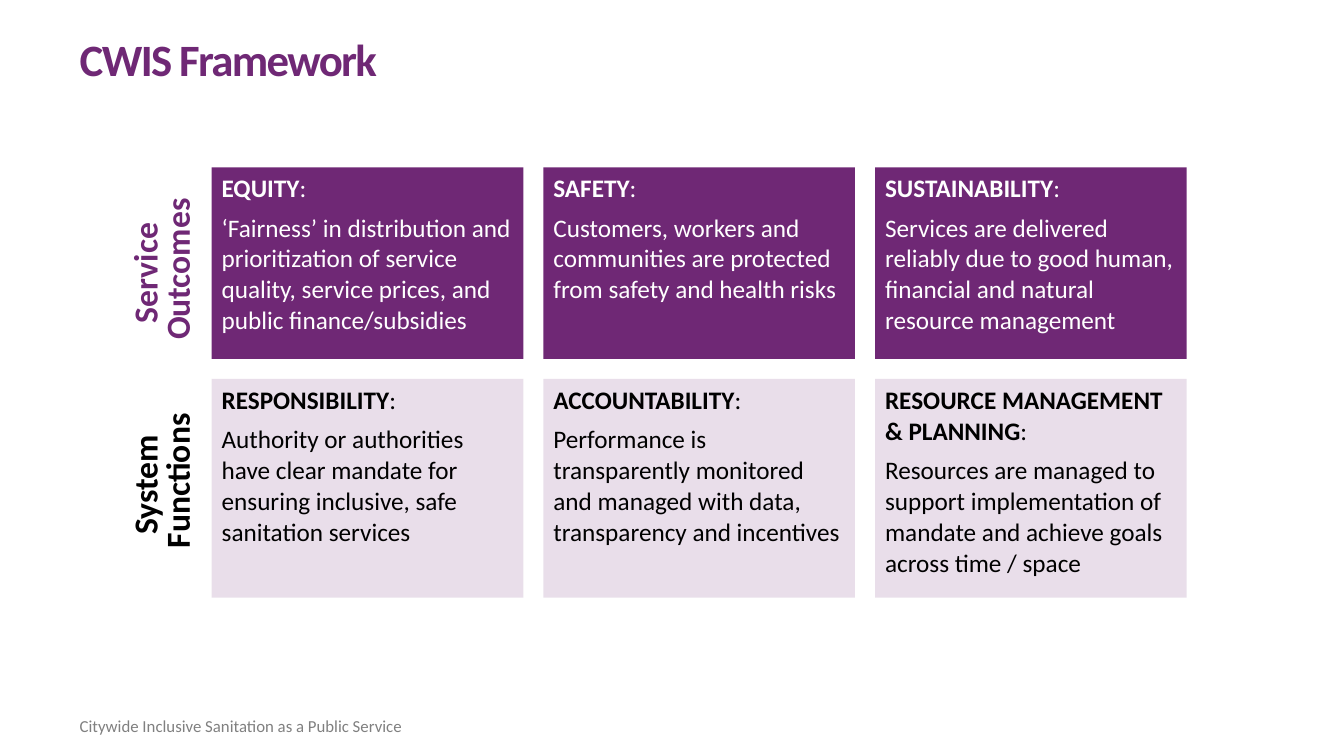
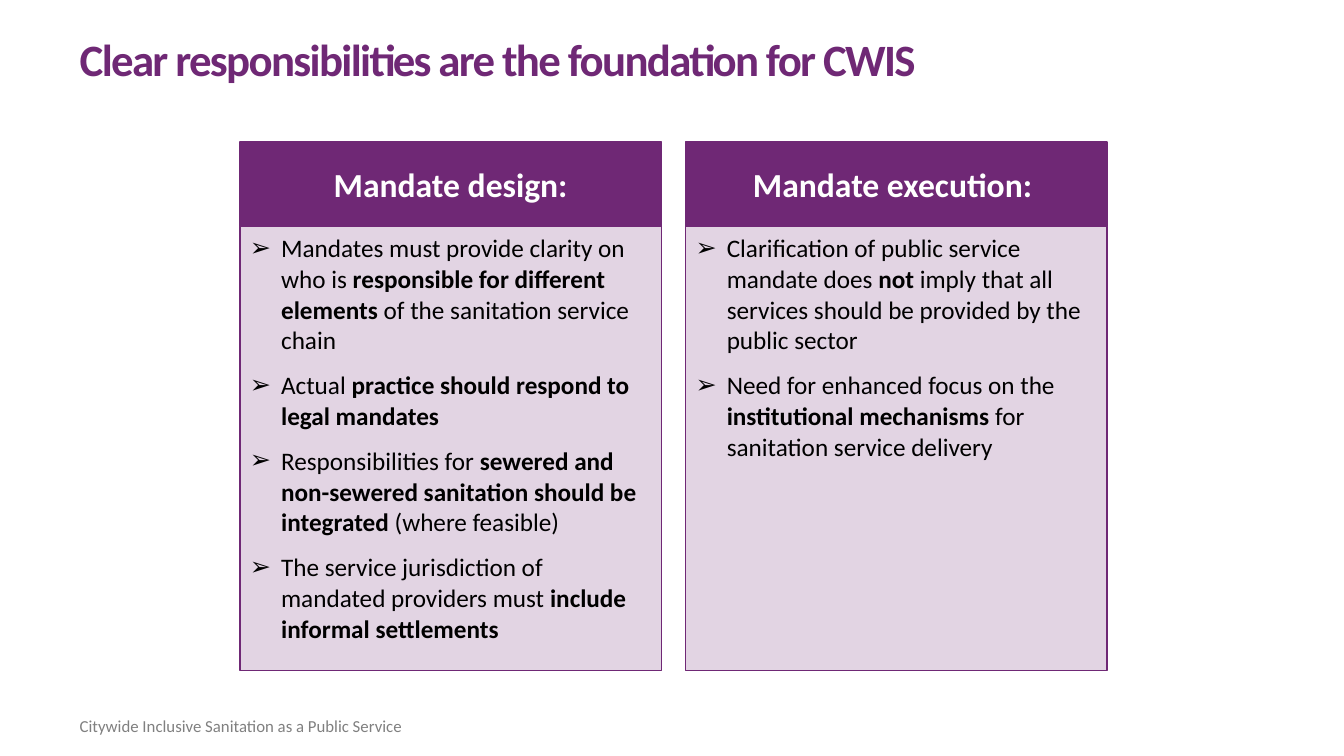
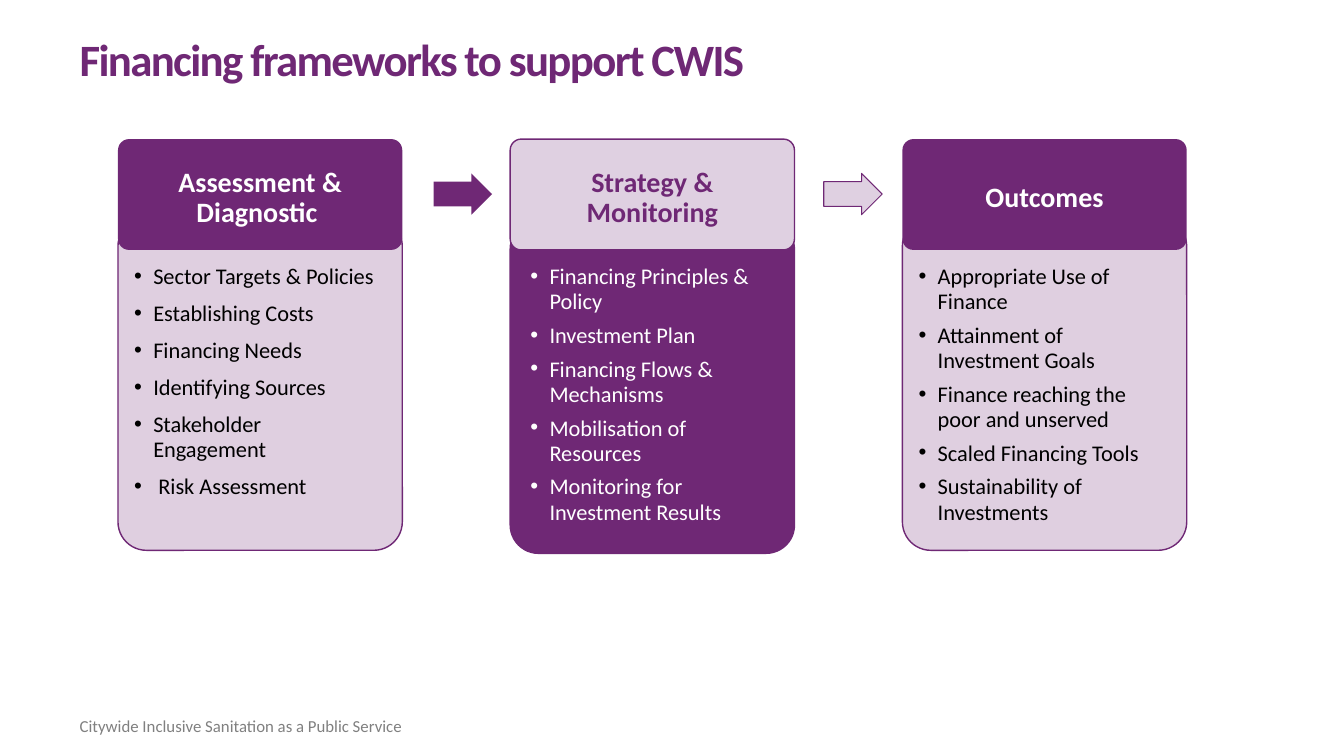
import pptx
import pptx.util
import pptx.dml.color
import pptx.enum.shapes
import pptx.enum.text
import pptx.oxml.ns
from lxml import etree

Inches, Pt = pptx.util.Inches, pptx.util.Pt
RGB = pptx.dml.color.RGBColor
SHAPE = pptx.enum.shapes.MSO_SHAPE
ALIGN = pptx.enum.text.PP_ALIGN
ANCHOR = pptx.enum.text.MSO_ANCHOR
qn = pptx.oxml.ns.qn

PURPLE = RGB(0x6F, 0x28, 0x75)
LILAC = RGB(0xDF, 0xD0, 0xE1)
WHITE = RGB(0xFF, 0xFF, 0xFF)
BLACK = RGB(0x00, 0x00, 0x00)
GREY = RGB(0x80, 0x80, 0x80)
FONT = "Calibri"
MARGIN = 0.79
INSETS = (0.1, 0.05, 0.1, 0.05)
NO_INSETS = (0, 0, 0, 0)

FOOTER = "Citywide Inclusive Sanitation as a Public Service"

FRAMEWORK = [
    dict(label=["Service ", "Outcomes"], top=1.66, height=1.9, alpha=100,
         label_color=PURPLE, color=WHITE, cells=[
             ("EQUITY", "‘Fairness’ in distribution and prioritization of service "
              "quality, service prices, and public finance/subsidies"),
             ("SAFETY", "Customers, workers and communities are protected from "
              "safety and health risks"),
             ("SUSTAINABILITY", "Services are delivered reliably due to good human, "
              "financial and natural resource management")]),
    dict(label=["System ", "Functions"], top=3.76, height=2.17, alpha=15,
         label_color=BLACK, color=BLACK, cells=[
             ("RESPONSIBILITY", "Authority or authorities have clear mandate for "
              "ensuring inclusive, safe sanitation services"),
             ("ACCOUNTABILITY", "Performance is transparently monitored and managed "
              "with data, transparency and incentives"),
             ("RESOURCE MANAGEMENT & PLANNING", "Resources are managed to support "
              "implementation of mandate and achieve goals across time / space")]),
]

MANDATES = [
    ("Mandate design:", [
        "Mandates must provide clarity on who is *responsible for different elements "
        "*of the sanitation service chain",
        "Actual *practice should respond to legal mandates",
        "Responsibilities for *sewered and non-sewered sanitation should be integrated "
        "*(where feasible)",
        "The service jurisdiction of mandated providers must "
        "*include informal settlements"]),
    ("Mandate execution: ", [
        "Clarification of public service mandate does *not* imply that all services "
        "should be provided by the public sector",
        "Need for enhanced focus on the *institutional mechanisms "
        "*for sanitation service delivery"]),
]

STAGES = [
    dict(head="Assessment & Diagnostic ", head_fill=PURPLE, head_color=WHITE,
         alpha=22, color=BLACK, top=2.16, indent=0.16, before=2.4,
         items=["Sector Targets & Policies", "Establishing Costs", "Financing Needs",
                "Identifying Sources", "Stakeholder Engagement", " Risk Assessment"]),
    dict(head="Strategy & Monitoring", head_fill=LILAC, head_color=PURPLE,
         alpha=100, color=WHITE, top=2.19, indent=0.2, before=0,
         items=["Financing Principles & Policy", "Investment Plan",
                "Financing Flows & Mechanisms", "Mobilisation of Resources",
                "Monitoring for Investment Results"]),
    dict(head="Outcomes", head_fill=PURPLE, head_color=WHITE,
         alpha=22, color=BLACK, top=2.16, indent=0.16, before=0,
         items=["Appropriate Use of Finance", "Attainment of Investment Goals",
                "Finance reaching the poor and unserved", "Scaled Financing Tools",
                "Sustainability of Investments"]),
]


def add_box(slide, kind, at, fill, alpha=100, line=None, adj=()):
    sp = slide.shapes.add_shape(kind, *map(Inches, at))
    sp.shadow.inherit = False
    sp.fill.solid()
    sp.fill.fore_color.rgb = fill
    if alpha < 100:
        color = sp.fill._xPr.find(qn("a:solidFill"))[0]
        etree.SubElement(color, qn("a:alpha"), val=str(alpha * 1000))
    if line:
        sp.line.color.rgb = PURPLE
        sp.line.width = Pt(line)
    else:
        sp.line.fill.background()
    for i, value in enumerate(adj):
        sp.adjustments[i] = value
    return sp


def set_text(sp, paragraphs, size, color, bold=False, align=ALIGN.LEFT,
             anchor=ANCHOR.TOP, insets=NO_INSETS, spacing=None, before=0, after=0,
             bullet=None, indent=0.0):
    tf = sp.text_frame
    tf.word_wrap = True
    tf.auto_size = pptx.enum.text.MSO_AUTO_SIZE.NONE
    tf.vertical_anchor = anchor
    tf.margin_left, tf.margin_top, tf.margin_right, tf.margin_bottom = map(Inches, insets)
    for i, text in enumerate(paragraphs):
        p = tf.add_paragraph() if i else tf.paragraphs[0]
        p.alignment = align
        if spacing:
            p.line_spacing = spacing
        p.space_before, p.space_after = Pt(before if i else 0), Pt(after)
        if bullet:
            add_bullet(p, bullet, color, indent)
        for j, part in enumerate(text.split("*")):
            if part:
                r = p.add_run()
                r.text = part
                r.font.name, r.font.size = FONT, Pt(size)
                r.font.bold = bold or j % 2 == 1
                r.font.color.rgb = color
    return tf


def add_bullet(p, char, color, indent):
    pPr = p._p.get_or_add_pPr()
    pPr.set("marL", str(Inches(indent)))
    pPr.set("indent", str(-Inches(indent)))
    clr = etree.SubElement(pPr, qn("a:buClr"))
    etree.SubElement(clr, qn("a:srgbClr"), val=str(color))
    etree.SubElement(pPr, qn("a:buFont"), typeface="Arial")
    etree.SubElement(pPr, qn("a:buChar"), char=char)


def add_textbox(slide, at, paragraphs, size, color, **style):
    sp = slide.shapes.add_textbox(*map(Inches, at))
    set_text(sp, paragraphs, size, color, **style)
    return sp


def add_slide(prs, title):
    slide = prs.slides.add_slide(prs.slide_layouts[5])
    sp = slide.shapes.title
    sp.left, sp.top, sp.width, sp.height = map(Inches, (MARGIN, 0.4, 8.44, 0.57))
    tf = set_text(sp, [title], 32, PURPLE, bold=True, spacing=0.85)
    tf.paragraphs[0].runs[0]._r.get_or_add_rPr().set("spc", "-120")
    add_textbox(slide, (MARGIN, 7.1, 7.42, 0.38), [FOOTER], 12, GREY)
    return slide


def build_framework(prs):
    slide = add_slide(prs, "CWIS Framework")
    left, width, gap = 2.1, 3.09, 0.2
    for row in FRAMEWORK:
        label = add_textbox(slide, (0.66, row["top"] + 0.54, 1.94, 0.94), row["label"],
                            24, row["label_color"], bold=True, align=ALIGN.CENTER,
                            anchor=ANCHOR.MIDDLE, spacing=Pt(23))
        label.rotation = 270
        for col, (head, body) in enumerate(row["cells"]):
            at = (left + col * (width + gap), row["top"], width, row["height"])
            sp = add_box(slide, SHAPE.RECTANGLE, at, PURPLE, row["alpha"])
            tf = set_text(sp, [f"*{head}*:", body], 18, row["color"],
                          insets=INSETS, spacing=Pt(22))
            tf.paragraphs[0].space_after = Pt(6)


def build_mandates(prs):
    slide = add_slide(prs, "Clear responsibilities are the foundation for CWIS")
    left, top, width, gap, head_height, body_height = 2.38, 1.41, 4.18, 0.24, 0.84, 4.4
    for col, (head, items) in enumerate(MANDATES):
        x = left + col * (width + gap)
        sp = add_box(slide, SHAPE.RECTANGLE, (x, top, width, head_height), PURPLE, line=1)
        set_text(sp, [head], 24, WHITE, bold=True, align=ALIGN.CENTER,
                 anchor=ANCHOR.MIDDLE, insets=INSETS)
        sp = add_box(slide, SHAPE.RECTANGLE, (x, top + head_height, width, body_height),
                     PURPLE, 20, line=1)
        set_text(sp, items, 18, BLACK, insets=INSETS, spacing=Pt(22), before=10,
                 bullet="➢", indent=0.31)


def build_financing(prs):
    slide = add_slide(prs, "Financing frameworks to support CWIS")
    left, top, width, step = 1.17, 1.38, 2.82, 3.89
    for col, stage in enumerate(STAGES):
        x = left + col * step
        add_box(slide, SHAPE.ROUNDED_RECTANGLE, (x, stage["top"], width, 3.3),
                PURPLE, stage["alpha"], line=1, adj=[0.1])
        sp = add_box(slide, SHAPE.ROUNDED_RECTANGLE, (x, top, width, 1.1),
                     stage["head_fill"], line=1 if stage["head_fill"] == LILAC else None,
                     adj=[0.1])
        set_text(sp, [stage["head"]], 20, stage["head_color"], bold=True,
                 align=ALIGN.CENTER, anchor=ANCHOR.MIDDLE,
                 insets=(0.16, 0.16, 0.16, 0.08), spacing=0.9)
        add_textbox(slide, (x + stage["indent"], 2.62, 2.41, 2.84), stage["items"], 16,
                    stage["color"], spacing=Pt(18), before=stage["before"], after=6,
                    bullet="•", indent=0.19)
    for i, (fill, line) in enumerate([(PURPLE, None), (LILAC, 0.75)]):
        add_box(slide, SHAPE.RIGHT_ARROW, (4.3 + i * 3.87, 1.72, 0.58, 0.41),
                fill, line=line, adj=[0.6, 0.5])


def main():
    prs = pptx.Presentation()
    prs.slide_width, prs.slide_height = Inches(13.33), Inches(7.5)
    build_framework(prs)
    build_mandates(prs)
    build_financing(prs)
    prs.save("out.pptx")


if __name__ == "__main__":
    main()
